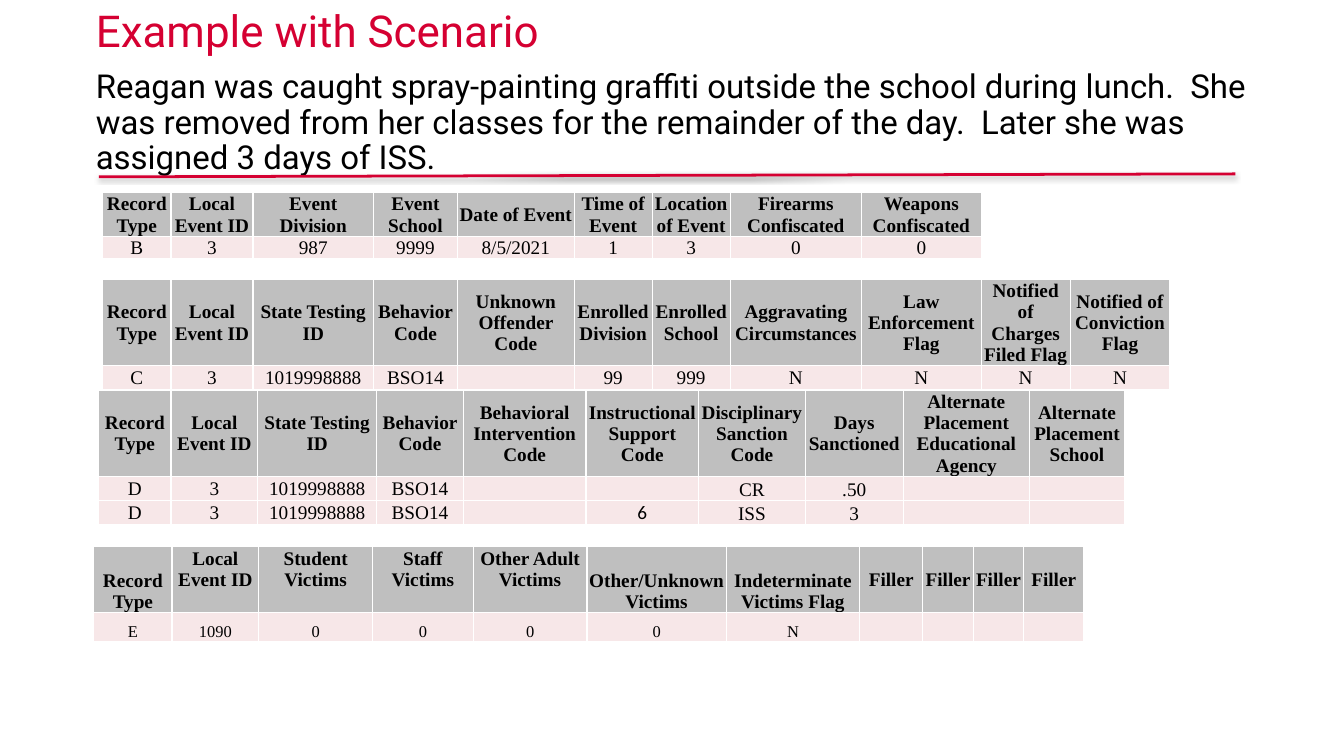
import dataclasses
import lxml.etree
import pptx
import pptx.dml.color
import pptx.enum.shapes
import pptx.enum.text
import pptx.oxml.ns
import pptx.util

Inches = pptx.util.Inches
Pt = pptx.util.Pt
qn = pptx.oxml.ns.qn
ANCHOR = pptx.enum.text.MSO_ANCHOR
ALIGN = pptx.enum.text.PP_ALIGN


@dataclasses.dataclass(frozen=True)
class Theme:
    """Colours, fonts and type sizes of the slide."""
    accent: str = "D50032"
    ink: str = "000000"
    header: str = "BFBFBF"
    row: str = "F7E7E8"
    border: str = "FFFFFF"
    sans: str = "Roboto"
    serif: str = "Times New Roman"
    digit: str = "Calibri"
    title_size: int = 32
    scenario_size: int = 24
    table_size: int = 14
    small_size: int = 12


@dataclasses.dataclass(frozen=True)
class Record:
    """Content and measures of one record table."""
    left: float
    top: float
    widths: tuple
    heights: tuple
    rows: tuple
    bottom_from: int = 99
    raised: tuple = ()
    body_size: int = Theme.table_size


THEME = Theme()
EVENT_WIDTHS = (0.69, 0.83, 1.22, 0.85, 1.18, 0.79, 0.79, 1.33, 1.21)
RECORDS = {
    "B": Record(1.04, 1.95, EVENT_WIDTHS, (0.43, 0.22), (
        ("Record Type", "Local Event ID", "Event Division", "Event School", "Date of Event",
         "Time of Event", "Location of Event", "Firearms Confiscated", "Weapons Confiscated"),
        ("B", "3", "987", "9999", "8/5/2021", "1", "3", "0", "0"))),
    "C": Record(1.04, 2.83, EVENT_WIDTHS + (0.9, 1.01), (0.65, 0.22), (
        ("Record Type", "Local Event ID", "State Testing ID", "Behavior Code",
         "Unknown Offender Code", "Enrolled Division", "Enrolled School",
         "Aggravating Circumstances", "Law Enforcement Flag",
         "Notified of Charges Filed Flag", "Notified of Conviction Flag"),
        ("C", "3", "1019998888", "BSO14", "", "99", "999", "N", "N", "N", "N"))),
    "D": Record(1, 3.95, (0.73, 0.88, 1.2, 0.88, 1.24, 1.14, 1.08, 0.99, 1.28, 0.96),
                (0.86, 0.24, 0.24), (
        ("Record Type", "Local Event ID", "State Testing ID", "Behavior Code",
         "Behavioral Intervention Code", "Instructional Support Code",
         "Disciplinary Sanction Code", "Days Sanctioned",
         "Alternate Placement Educational Agency", "Alternate Placement School"),
        ("D", "3", "1019998888", "BSO14", "", "", "CR", ".50", "", ""),
        ("D", "3", "1019998888", "BSO14", "", "6", "ISS", "3", "", "")), bottom_from=4),
    "E": Record(0.95, 5.53, (0.79, 0.88, 1.15, 1.02, 1.15, 1.41, 1.35, 0.64, 0.51, 0.51, 0.61),
                (0.67, 0.29), (
        ("Record Type", "Local Event ID", "Student Victims", "Staff Victims",
         "Other Adult Victims", "Other/Unknown Victims", "Indeterminate Victims Flag",
         "Filler", "Filler", "Filler", "Filler"),
        ("E", "1090", "0", "0", "0", "0", "N", "", "", "", "")),
        bottom_from=0, raised=(1, 2, 3, 4, 7, 8, 9, 10), body_size=THEME.small_size),
}


def rgb(value):
    """Turn a hex string into a colour."""
    return pptx.dml.color.RGBColor.from_string(value)


def style_font(font, name, size, color, bold=False):
    """Set the face, size, colour and weight of a font."""
    font.name, font.size, font.bold = name, Pt(size), bold
    font.color.rgb = rgb(color)


def set_heading(sp, box, text, size, color, anchor):
    """Place a shape in its box and fill it with left-aligned heading text."""
    sp.left, sp.top, sp.width, sp.height = map(Inches, box)
    tf = sp.text_frame
    tf.word_wrap = True
    tf.auto_size = pptx.enum.text.MSO_AUTO_SIZE.NONE
    tf.vertical_anchor = anchor
    tf.margin_left = tf.margin_right = Inches(0.13)
    tf.margin_top = tf.margin_bottom = Inches(0.07)
    p = tf.paragraphs[0]
    p.text = text
    p.alignment = ALIGN.LEFT
    p.line_spacing = 0.9
    style_font(p.runs[0].font, THEME.sans, size, color)


def add_rule(s, start, end):
    """Draw the accent rule with its soft shadow."""
    points = [Inches(v) for v in start + end]
    rule = s.shapes.add_connector(pptx.enum.shapes.MSO_CONNECTOR.STRAIGHT, *points)
    rule.line.color.rgb = rgb(THEME.accent)
    rule.line.width = Pt(2)
    effects = lxml.etree.SubElement(rule._element.spPr, qn("a:effectLst"))
    shadow = lxml.etree.SubElement(effects, qn("a:outerShdw"), blurRad=str(Pt(3.1)),
                                   dist=str(Pt(1.6)), dir="5400000", rotWithShape="0")
    color = lxml.etree.SubElement(shadow, qn("a:srgbClr"), val=THEME.ink)
    lxml.etree.SubElement(color, qn("a:alpha"), val="38000")


def add_borders(cell):
    """Give a cell a thin border on all four sides."""
    tc_pr = cell._tc.get_or_add_tcPr()
    for side in ("a:lnL", "a:lnR", "a:lnT", "a:lnB"):
        ln = lxml.etree.SubElement(tc_pr, qn(side), w=str(Pt(1)))
        fill = lxml.etree.SubElement(ln, qn("a:solidFill"))
        lxml.etree.SubElement(fill, qn("a:srgbClr"), val=THEME.border)


def fill_cell(cell, text, size, is_header, anchor):
    """Write and format one table cell."""
    add_borders(cell)
    cell.fill.solid()
    cell.fill.fore_color.rgb = rgb(THEME.header if is_header else THEME.row)
    cell.margin_left = cell.margin_right = cell.margin_top = Inches(0.01)
    cell.margin_bottom = 0
    cell.vertical_anchor = anchor
    p = cell.text_frame.paragraphs[0]
    p.alignment = ALIGN.CENTER
    if text:
        p.text = text
        style_font(p.runs[0].font, THEME.serif, size, THEME.ink, is_header)
    else:
        lxml.etree.SubElement(p._p, qn("a:endParaRPr"), sz=str(size * 100))


def add_record(s, record):
    """Build one record table and return it."""
    table = s.shapes.add_table(
        len(record.rows), len(record.widths), Inches(record.left), Inches(record.top),
        Inches(sum(record.widths)), Inches(sum(record.heights))).table
    for column, width in zip(table.columns, record.widths):
        column.width = Inches(width)
    for i, (height, texts) in enumerate(zip(record.heights, record.rows)):
        table.rows[i].height = Inches(height)
        is_header = i == 0
        size = THEME.table_size if is_header else record.body_size
        for j, text in enumerate(texts):
            low = j >= record.bottom_from and (not is_header or record.bottom_from == 0)
            cell = table.cell(i, j)
            fill_cell(cell, text, size, is_header, ANCHOR.BOTTOM if low else ANCHOR.MIDDLE)
            if is_header and j in record.raised:
                cell.margin_bottom = Inches(0.22)
    return table


def add_scenario_slide(prs):
    """Build the scenario slide with its four record tables."""
    s = prs.slides.add_slide(prs.slide_layouts[5])
    set_heading(s.shapes.title, (0.84, 0.02, 11.66, 0.63), "Example with Scenario",
                THEME.title_size, THEME.accent, ANCHOR.MIDDLE)
    scenario = s.shapes.add_textbox(0, 0, 0, 0)
    set_heading(scenario, (0.84, 0.64, 12, 5.83),
                "Reagan was caught spray-painting graffiti outside the school during lunch.  "
                "She was removed from her classes for the remainder of the day.  "
                "Later she was assigned 3 days of ISS.",
                THEME.scenario_size, THEME.ink, ANCHOR.TOP)
    add_rule(s, (1, 1.79), (12.5, 1.76))
    tables = {name: add_record(s, record) for name, record in RECORDS.items()}
    support_code = tables["D"].cell(2, 5).text_frame.paragraphs[0].runs[0]
    support_code.font.name = THEME.digit


def main():
    """Create and save the presentation."""
    prs = pptx.Presentation()
    prs.slide_width, prs.slide_height = Inches(13.6), Inches(7.5)
    add_scenario_slide(prs)
    prs.save("out.pptx")


if __name__ == "__main__":
    main()
